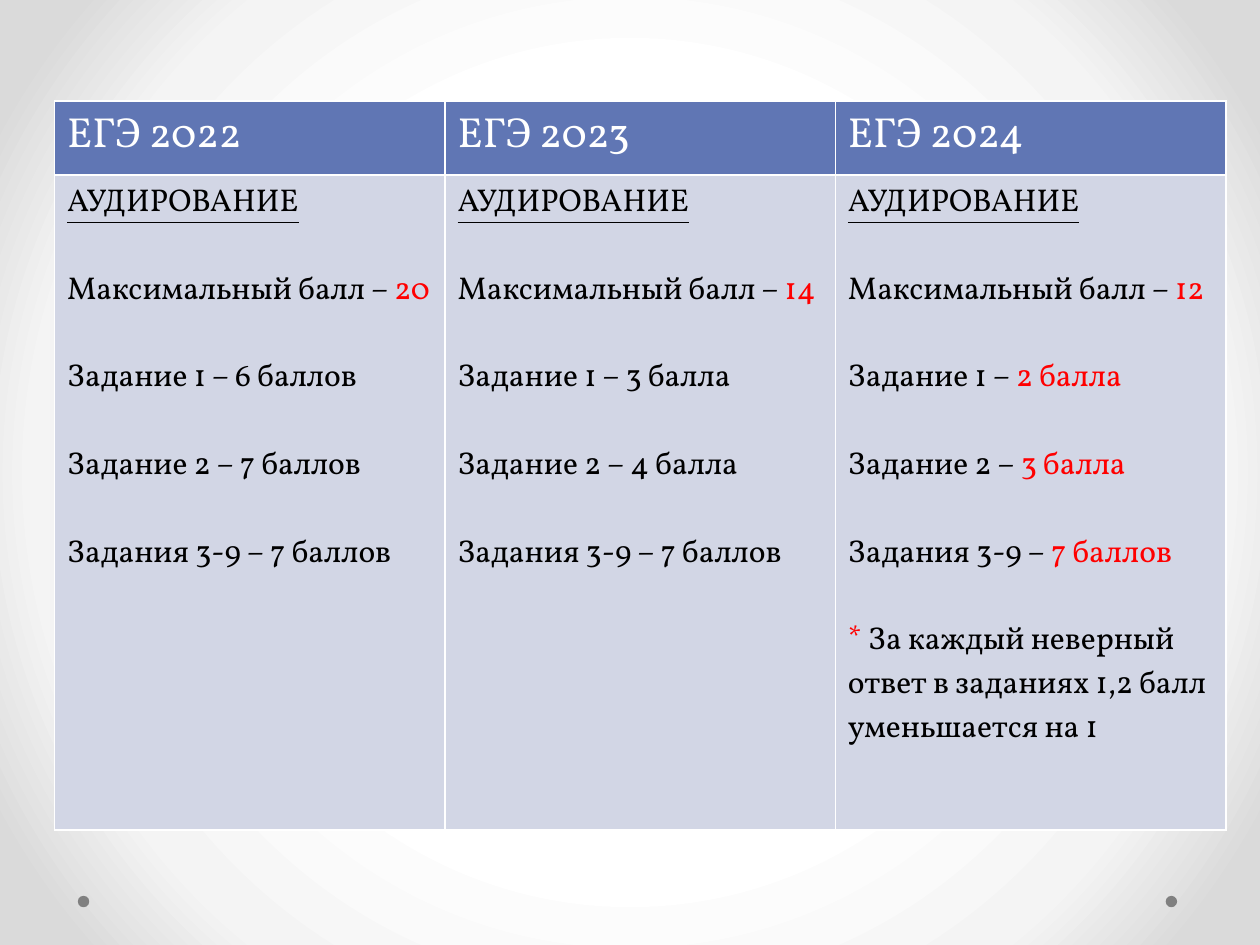
from dataclasses import dataclass

from pptx import Presentation
from pptx.dml.color import RGBColor
from pptx.enum.shapes import MSO_SHAPE
from pptx.oxml import parse_xml
from pptx.oxml.ns import nsdecls
from pptx.util import Cm, Pt

OVAL = MSO_SHAPE.OVAL


@dataclass(frozen=True)
class Theme:
    font: str = "Vollkorn"
    header_size: int = 24
    body_size: int = 18
    paragraph_gap: int = 25
    header_fill: str = "6076B4"
    body_fill: str = "D2D6E5"
    header_text: str = "FFFFFF"
    text: str = "000000"
    accent: str = "FF0000"
    border: str = "FFFFFF"
    dot: str = "808080"
    backdrop: tuple = ((50, "FFFFFF"), (76, "F4F4F4"), (92, "DADADA"))


THEME = Theme()

# Each paragraph is a (black text, red text) pair; the note puts red first.
EXAMS = {
    "ЕГЭ 2022": [
        ("Максимальный балл – ", "20"),
        ("Задание 1 – 6 баллов", ""),
        ("Задание 2 – 7 баллов", ""),
        ("Задания 3-9 – 7 баллов", ""),
    ],
    "ЕГЭ 2023": [
        ("Максимальный балл – ", "14"),
        ("Задание 1 – 3 балла", ""),
        ("Задание 2 – 4 балла", ""),
        ("Задания 3-9 – 7 баллов", ""),
    ],
    "ЕГЭ 2024": [
        ("Максимальный балл – ", "12"),
        ("Задание 1 – ", "2 балла"),
        ("Задание 2 – ", "3 балла"),
        ("Задания 3-9 – ", "7 баллов"),
    ],
}
SECTION = "АУДИРОВАНИЕ"
NOTE_MARK = "* "
NOTE = "За каждый неверный ответ в заданиях 1,2 балл уменьшается на 1"


def rgb(color):
    return RGBColor.from_string(color)


def set_background(s):
    """Give the slide a circular gradient that darkens towards the edges."""
    s.background.fill.solid()
    stops = "".join(
        f'<a:gs pos="{pos * 1000}"><a:srgbClr val="{color}"/></a:gs>'
        for pos, color in THEME.backdrop
    )
    gradient = parse_xml(
        f'<a:gradFill {nsdecls("a")} rotWithShape="1"><a:gsLst>{stops}</a:gsLst>'
        '<a:path path="circle"><a:fillToRect l="50000" t="50000" r="50000" b="50000"/>'
        "</a:path></a:gradFill>"
    )
    bg_pr = s.background._cSld.bg.bgPr
    bg_pr.replace(bg_pr[0], gradient)


def add_dot(s, left):
    sp = s.shapes.add_shape(OVAL, left, Cm(18.06), Cm(0.23), Cm(0.23))
    sp.shadow.inherit = False
    sp.fill.solid()
    sp.fill.fore_color.rgb = rgb(THEME.dot)
    sp.line.fill.background()


def style_cell(cell, fill):
    cell.fill.solid()
    cell.fill.fore_color.rgb = rgb(fill)
    tc_pr = cell._tc.get_or_add_tcPr()
    for i, side in enumerate("LRTB"):
        tc_pr.insert(i, parse_xml(
            f'<a:ln{side} {nsdecls("a")} w="{Pt(1)}"><a:solidFill>'
            f'<a:srgbClr val="{THEME.border}"/></a:solidFill></a:ln{side}>'
        ))


def write_paragraph(p, runs, size):
    """Fill a paragraph from (text, color) pairs, leaving out empty ones."""
    p.font.name = THEME.font
    p.font.size = Pt(size)
    p.font.bold = False
    for text, color in runs:
        if text:
            r = p.add_run()
            r.text = text
            r.font.color.rgb = rgb(color)


def fill_header(cell, title):
    style_cell(cell, THEME.header_fill)
    write_paragraph(cell.text_frame.paragraphs[0],
                    [(title, THEME.header_text)], THEME.header_size)


def fill_body(cell, paragraphs):
    style_cell(cell, THEME.body_fill)
    tf = cell.text_frame
    p = tf.paragraphs[0]
    write_paragraph(p, [(SECTION, THEME.text)], THEME.body_size)
    p.font.underline = True
    for runs in paragraphs:
        p = tf.add_paragraph()
        p.space_before = Pt(THEME.paragraph_gap)
        write_paragraph(p, runs, THEME.body_size)


def add_exam_table(s):
    table = s.shapes.add_table(2, len(EXAMS), Cm(1.1), Cm(2.04),
                               Cm(23.61), Cm(14.69)).table
    table.horz_banding = False
    table.rows[0].height = Cm(1.49)
    table.rows[1].height = Cm(13.2)
    for col, (title, lines) in enumerate(EXAMS.items()):
        paragraphs = [[(plain, THEME.text), (marked, THEME.accent)]
                      for plain, marked in lines]
        if col == len(EXAMS) - 1:
            paragraphs.append([(NOTE_MARK, THEME.accent), (NOTE, THEME.text)])
        fill_header(table.cell(0, col), title)
        fill_body(table.cell(1, col), paragraphs)


def main():
    prs = Presentation()
    prs.slide_width, prs.slide_height = Cm(25.4), Cm(19.05)
    s = prs.slides.add_slide(prs.slide_layouts[6])
    set_background(s)
    for left in (Cm(23.5), Cm(1.57)):
        add_dot(s, left)
    add_exam_table(s)
    prs.save("out.pptx")


if __name__ == "__main__":
    main()
